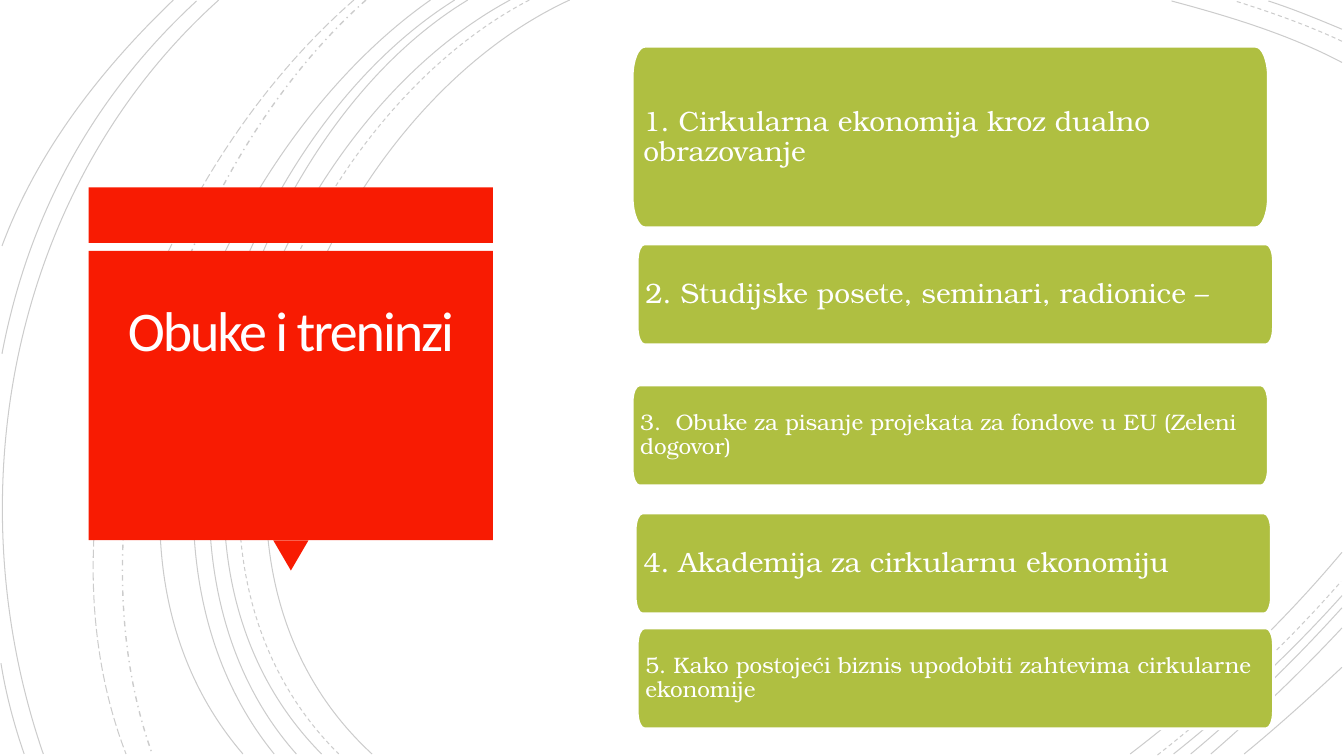
from lxml.etree import SubElement
from pptx import Presentation
from pptx.dml.color import RGBColor
from pptx.enum.dml import MSO_LINE
from pptx.enum.shapes import MSO_SHAPE
from pptx.enum.text import MSO_ANCHOR, PP_ALIGN
from pptx.oxml.ns import qn
from pptx.util import Pt

PX = 9144  # 100 px to the inch
SLIDE_W, SLIDE_H = 1333, 750

BLACK = RGBColor(0x00, 0x00, 0x00)
WHITE = RGBColor(0xFF, 0xFF, 0xFF)
TITLE_WHITE = RGBColor(0xFF, 0xFE, 0xFF)
RED = RGBColor(0xF8, 0x1B, 0x02)
GREEN = RGBColor(0xAF, 0xBF, 0x41)

TITLE_FONT = "Calibri"
CARD_FONT = "TeX Gyre Bonum"

SOLID, DASH = MSO_LINE.SOLID, MSO_LINE.DASH
# Start, two control points and end of each arc, then its dash
ARCS = [
    ((565, 0), (315, 115), (143, 540), (369, 748), SOLID),
    ((1331, 62), (1278, 34), (1218, 16), (1162, 1), SOLID),
    ((1121, 748), (1197, 690), (1269, 622), (1331, 548), SOLID),
    ((525, 0), (285, 125), (123, 537), (336, 748), DASH),
    ((1331, 41), (1297, 25), (1260, 12), (1225, 1), DASH),
    ((1148, 749), (1213, 698), (1275, 640), (1330, 577), DASH),
    ((506, 0), (270, 127), (110, 537), (319, 748), SOLID),
    ((1331, 29), (1307, 19), (1283, 9), (1258, 1), SOLID),
    ((1164, 748), (1223, 701), (1280, 648), (1331, 591), SOLID),
    ((464, 0), (244, 133), (110, 541), (294, 748), SOLID),
    ((1181, 748), (1234, 704), (1284, 655), (1331, 603), SOLID),
    ((451, 0), (231, 138), (97, 533), (272, 748), SOLID),
    ((1201, 748), (1246, 709), (1290, 667), (1331, 623), SOLID),
    ((427, 0), (217, 147), (53, 529), (241, 748), SOLID),
    ((1234, 748), (1267, 721), (1299, 692), (1331, 662), SOLID),
    ((363, 0), (176, 166), (65, 509), (151, 748), MSO_LINE.DASH_DOT),
    ((351, 0), (157, 169), (29, 499), (125, 748), MSO_LINE.LONG_DASH),
    ((217, 0), (11, 185), (-46, 490), (43, 748), SOLID),
    ((195, 1), (92, 96), (28, 214), (2, 351), SOLID),
    ((1, 658), (6, 689), (14, 719), (24, 748), SOLID),
    ((172, 0), (100, 69), (37, 150), (2, 244), SOLID),
]

# Left, top, height, inset, text size, wording
CARD_W = 631
CARDS = [
    (627, 46, 180, 11, 20, "1. Cirkularna ekonomija kroz dualno obrazovanje"),
    (632, 242, 100, 8, 20, "2. Studijske posete, seminari, radionice –"),
    (627, 382, 100, 8, 16,
     "3.  Obuke za pisanje projekata za fondove u EU (Zeleni dogovor)"),
    (630, 509, 100, 8, 20, "4. Akademija za cirkularnu ekonomiju"),
    (632, 623, 100, 8, 16,
     "5. Kako postojeći biznis upodobiti zahtevima cirkularne ekonomije"),
]


def add_curved_outline(shapes, points, close):
    """Draw a freeform in px: after the start, a curve (3 points), a line (1), and so on."""
    (start_x, start_y), *rest = [(round(x * PX), round(y * PX)) for x, y in points]
    builder = shapes.build_freeform(start_x, start_y)
    builder.add_line_segments(rest, close=close)
    outline = builder.convert_to_shape()
    outline.shadow.inherit = False

    segments = list(outline._element.iter(qn("a:lnTo")))
    for first in range(0, len(segments) - 2, 4):
        curve, *others = segments[first:first + 3]
        for other in others:
            curve.append(other[0])
            other.getparent().remove(other)
        curve.tag = qn("a:cubicBezTo")
    return outline


def add_background_arcs(shapes):
    for *controls, dash in ARCS:
        arc = add_curved_outline(shapes, controls, close=False)
        arc.fill.background()
        line = arc.line
        line.color.rgb = BLACK
        line.width = Pt(1 if dash == MSO_LINE.DASH_DOT else 0.75)
        line.dash_style = dash
        colour = arc._element.spPr.find(qn("a:ln")).find(".//" + qn("a:srgbClr"))
        SubElement(colour, qn("a:alpha"), val="20000")


def set_insets(frame, left, top, right, bottom):
    frame.margin_left, frame.margin_top = left * PX, top * PX
    frame.margin_right, frame.margin_bottom = right * PX, bottom * PX


def style_paragraph(paragraph, font_name, size, colour, spacing, alignment):
    paragraph.font.name = font_name
    paragraph.font.size = Pt(size)
    paragraph.font.color.rgb = colour
    paragraph.line_spacing = spacing
    paragraph.alignment = alignment


def add_title_panel(slide, left, top, width):
    """Red bar, pointer and block with the slide title in the block."""
    parts = [
        (MSO_SHAPE.RECTANGLE, 0, 0, width, 55, 0),
        (MSO_SHAPE.ISOSCELES_TRIANGLE, 183, 350, 35, 30, 180),
        (MSO_SHAPE.RECTANGLE, 0, 63, width, 287, 0),
    ]
    for preset, dx, dy, part_w, part_h, rotation in parts:
        part = slide.shapes.add_shape(
            preset, (left + dx) * PX, (top + dy) * PX, part_w * PX, part_h * PX)
        part.rotation = rotation
        part.shadow.inherit = False
        part.fill.solid()
        part.fill.fore_color.rgb = RED
        part.line.fill.background()

    title = slide.shapes.title
    title.left, title.top = (left + 9) * PX, (top + 71) * PX
    title.width, title.height = (width - 18) * PX, 269 * PX
    frame = title.text_frame
    frame.text = "Obuke i treninzi"
    frame.word_wrap = True
    frame.vertical_anchor = MSO_ANCHOR.TOP
    set_insets(frame, 25, 46, 25, 25)
    heading = frame.paragraphs[0]
    style_paragraph(heading, TITLE_FONT, 40, TITLE_WHITE, 0.85, PP_ALIGN.CENTER)
    heading._p.get_or_add_pPr().get_or_add_defRPr().set("spc", "-150")
    slide.shapes._spTree.append(title._element)  # in front of the block


def card_outline(left, top, width, height):
    """Rectangle whose corners are tall quarter ellipses, clockwise from the left side."""
    radius_x, radius_y = height * 0.07, height / 6
    pull_x, pull_y = radius_x * 0.45, radius_y * 0.45
    right, bottom = left + width, top + height
    return [
        (left, top + radius_y),
        (left, top + pull_y), (left + pull_x, top), (left + radius_x, top),
        (right - radius_x, top),
        (right - pull_x, top), (right, top + pull_y), (right, top + radius_y),
        (right, bottom - radius_y),
        (right, bottom - pull_y), (right - pull_x, bottom), (right - radius_x, bottom),
        (left + radius_x, bottom),
        (left + pull_x, bottom), (left, bottom - pull_y), (left, bottom - radius_y),
    ]


def add_card(shapes, left, top, height, inset, size, wording):
    card = add_curved_outline(
        shapes, card_outline(left, top, CARD_W, height), close=True)
    card.fill.solid()
    card.fill.fore_color.rgb = GREEN
    card.line.color.rgb = WHITE
    card.line.width = Pt(2)
    frame = card.text_frame
    frame.text = wording
    frame.word_wrap = True
    frame.vertical_anchor = MSO_ANCHOR.MIDDLE
    set_insets(frame, inset, inset, inset, inset)
    style_paragraph(frame.paragraphs[0], CARD_FONT, size, WHITE, 0.9, PP_ALIGN.LEFT)


def main():
    deck = Presentation()
    deck.slide_width, deck.slide_height = SLIDE_W * PX, SLIDE_H * PX
    slide = deck.slides.add_slide(deck.slide_layouts[5])
    add_background_arcs(slide.shapes)
    add_title_panel(slide, 88, 186, 401)
    for card in CARDS:
        add_card(slide.shapes, *card)
    deck.save("out.pptx")


if __name__ == "__main__":
    main()
